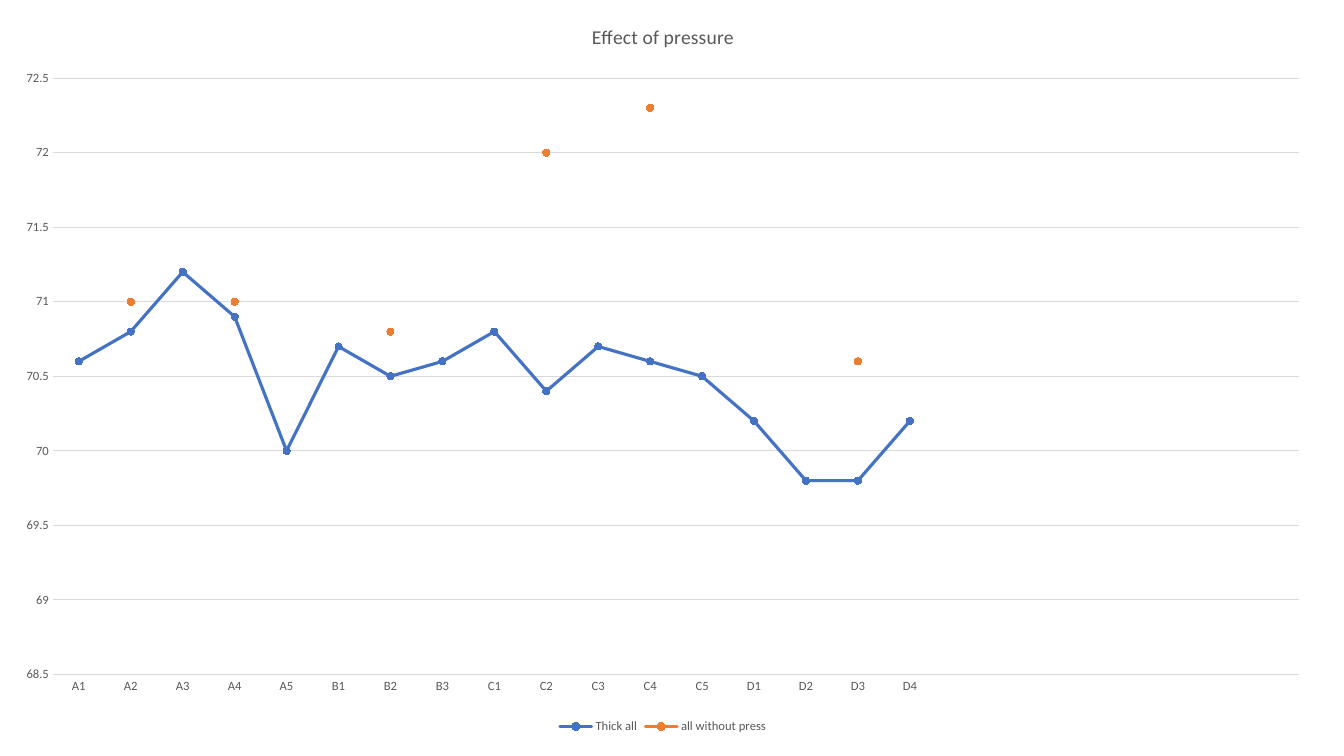
from dataclasses import dataclass
from typing import Any, Optional

from pptx import Presentation
from pptx import util as u
from pptx.chart import data as chart_data
from pptx.dml import color
from pptx.enum import chart as chart_enum

SLIDE_SIZE = (1344, 756)
CHART_BOX = (0, 0, 1326, 738)
SLOTS = 24
GROUP_SIZES = {"A": 5, "B": 3, "C": 5, "D": 4}
SAMPLES = [f"{group}{number}" for group, size in GROUP_SIZES.items()
           for number in range(1, size + 1)]
GRAY_TEXT, GRID_GRAY = "595959", "D9D9D9"


@dataclass(frozen=True)
class Measurement:
    """A named series of thickness values keyed by sample."""
    name: str
    hue: str
    values: dict[str, float]

    def slots(self) -> list[Optional[float]]:
        """Return one value or gap for every slot on the axis."""
        filled = [self.values.get(sample) for sample in SAMPLES]
        return filled + [None] * (SLOTS - len(filled))


MEASUREMENTS = [
    Measurement("Thick all", "4472C4", dict(zip(SAMPLES, [
        70.6, 70.8, 71.2, 70.9, 70.0, 70.7, 70.5, 70.6, 70.8,
        70.4, 70.7, 70.6, 70.5, 70.2, 69.8, 69.8, 70.2]))),
    Measurement("all without press", "ED7D31", {
        "A2": 71.0, "A4": 71.0, "B2": 70.8,
        "C2": 72.0, "C4": 72.3, "D3": 70.6}),
]


def px(length: int) -> u.Emu:
    """Turn pixels into EMU."""
    return u.Emu(round(length * 914400 / 100.8))


def rgb(value: str) -> color.RGBColor:
    """Turn a hex string into a colour."""
    return color.RGBColor.from_string(value)


def assign(target: Any, values: dict[str, Any]) -> None:
    """Set each named attribute on the target."""
    for name, value in values.items():
        setattr(target, name, value)


def style_font(font: Any, size: int) -> None:
    """Give a font its face, size and gray colour."""
    assign(font, {"name": "Calibri", "size": u.Pt(size), "bold": False})
    font.color.rgb = rgb(GRAY_TEXT)


def style_line(line: Any, hue: str, width: float) -> None:
    """Give a line its colour and width in points."""
    line.color.rgb = rgb(hue)
    line.width = u.Pt(width)


def style_title(chart: Any, wording: str) -> None:
    """Write the chart title."""
    chart.has_title = True
    chart.chart_title.include_in_layout = False
    para = chart.chart_title.text_frame.paragraphs[0]
    span = para.add_run()
    span.text = wording
    style_font(span.font, 14)


def style_axes(chart: Any) -> None:
    """Format both axes and the gridlines."""
    none = chart_enum.XL_TICK_MARK.NONE
    for axis in (chart.category_axis, chart.value_axis):
        assign(axis, {"major_tick_mark": none, "minor_tick_mark": none})
        style_font(axis.tick_labels.font, 9)
    style_line(chart.category_axis.format.line, GRID_GRAY, 0.75)
    scale = chart.value_axis
    assign(scale, {"minimum_scale": 68.5, "maximum_scale": 72.5,
                   "major_unit": 0.5, "has_major_gridlines": True})
    assign(scale.tick_labels, {"number_format": "General",
                               "number_format_is_linked": False})
    scale.format.line.fill.background()
    style_line(scale.major_gridlines.format.line, GRID_GRAY, 0.75)


def style_series(series: Any, hue: str) -> None:
    """Format one round-capped line and its round markers."""
    series.smooth = False
    style_line(series.format.line, hue, 2.25)
    series._element.xpath("c:spPr/a:ln")[0].set("cap", "rnd")
    marker = series.marker
    assign(marker, {"style": chart_enum.XL_MARKER_STYLE.CIRCLE, "size": 5})
    marker.format.fill.solid()
    marker.format.fill.fore_color.rgb = rgb(hue)
    style_line(marker.format.line, hue, 0.75)


def add_pressure_chart(page: Any) -> None:
    """Place the line chart on the page."""
    table = chart_data.CategoryChartData()
    table.categories = SAMPLES + [""] * (SLOTS - len(SAMPLES))
    for measurement in MEASUREMENTS:
        table.add_series(measurement.name, measurement.slots())
    chart = page.shapes.add_chart(chart_enum.XL_CHART_TYPE.LINE_MARKERS,
                                  *map(px, CHART_BOX), table).chart
    style_font(chart.font, 10)
    style_title(chart, "Effect of pressure")
    style_axes(chart)
    plot = chart.plots[0]
    plot.vary_by_categories = False
    for series, measurement in zip(plot.series, MEASUREMENTS):
        style_series(series, measurement.hue)
    chart.has_legend = True
    assign(chart.legend, {"position": chart_enum.XL_LEGEND_POSITION.BOTTOM,
                          "include_in_layout": False})
    style_font(chart.legend.font, 9)


def main() -> None:
    """Build and save the deck."""
    deck = Presentation()
    deck.slide_width, deck.slide_height = map(px, SLIDE_SIZE)
    page = deck.slides.add_slide(deck.slide_layouts[6])
    add_pressure_chart(page)
    deck.save("out.pptx")


if __name__ == "__main__":
    main()
